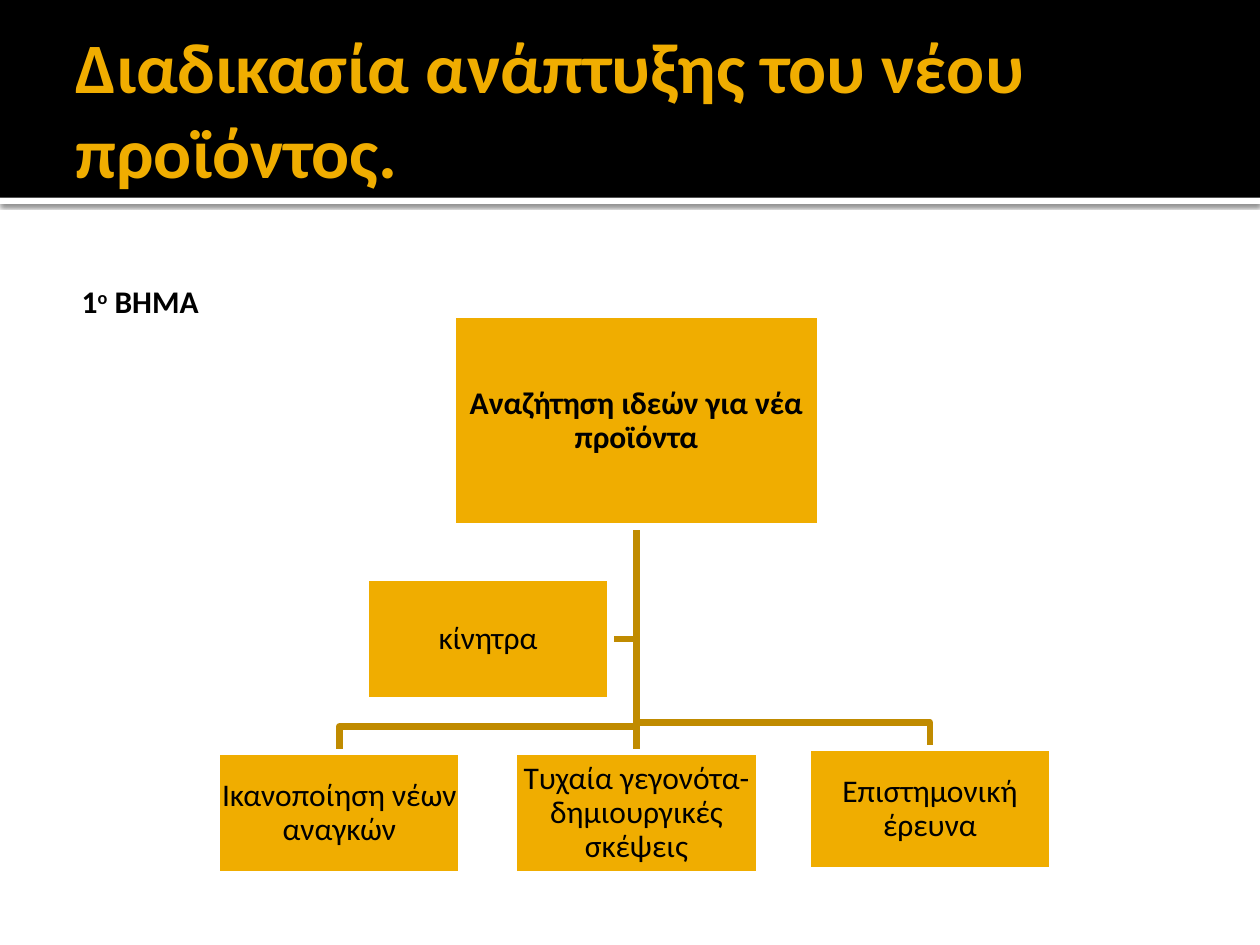
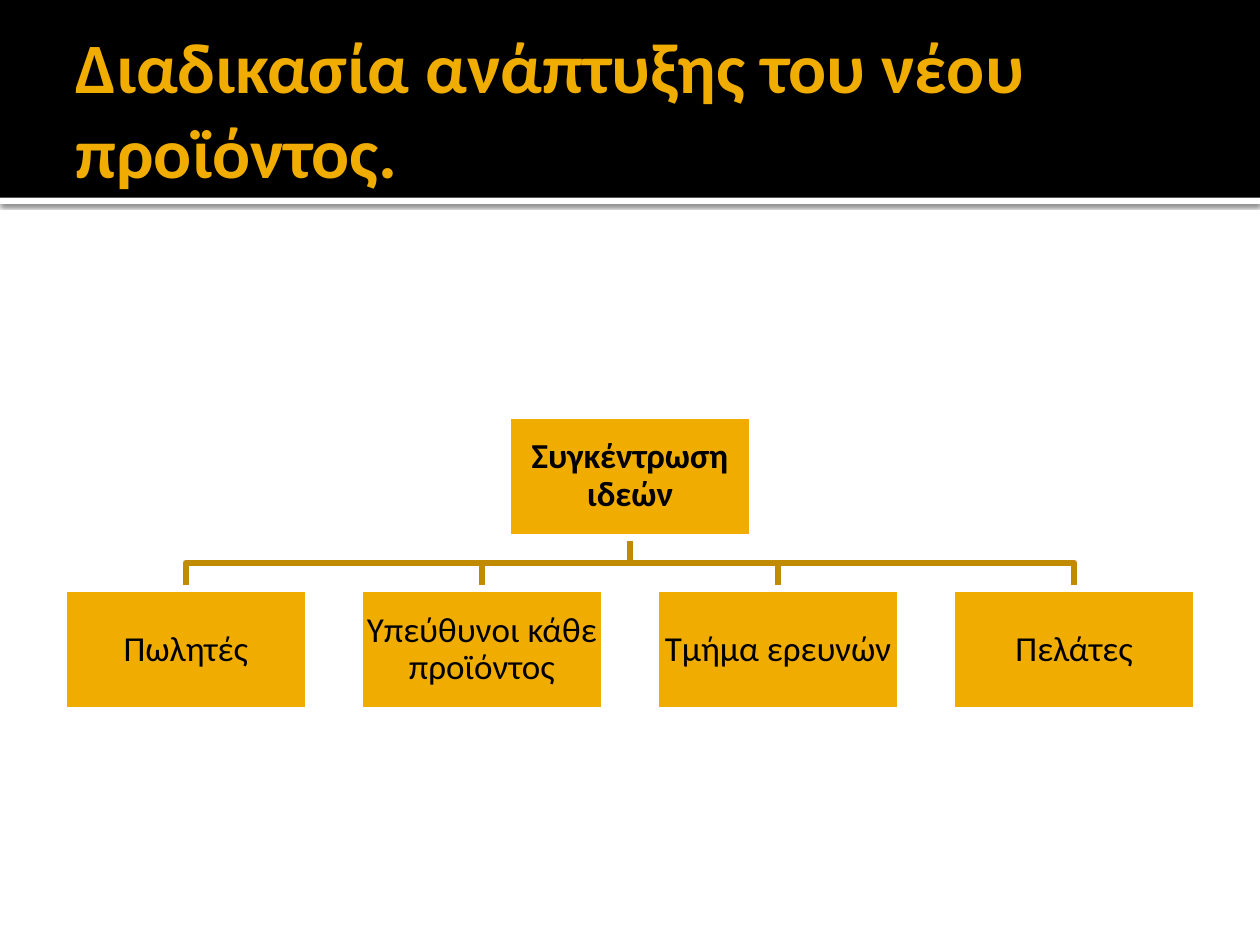
from lxml.etree import SubElement
from pptx import Presentation
from pptx.dml.color import RGBColor
from pptx.enum.shapes import MSO_CONNECTOR, MSO_SHAPE
from pptx.enum.text import MSO_ANCHOR, PP_ALIGN
from pptx.oxml.ns import qn
from pptx.util import Pt

BLACK = RGBColor(0x00, 0x00, 0x00)
WHITE = RGBColor(0xFF, 0xFF, 0xFF)
AMBER = RGBColor(0xF0, 0xAD, 0x00)
DARK_AMBER = RGBColor(0xC0, 0x8B, 0x00)
FONT = "Calibri"
TITLE = "Διαδικασία ανάπτυξης του νέου προϊόντος."
SLIDE_WIDTH, SLIDE_HEIGHT = 720, 540
BAND_HEIGHT, STRIP_HEIGHT = 113, 3.6
NODE_WIDTH, NODE_HEIGHT = 140, 69.8
LINE_WIDTH = 3.78
BRANCH_DROP = 14.7


def style_runs(paragraph, size, color, bold):
    """Give every run of a paragraph the deck font."""
    for run in paragraph.runs:
        run.font.name = FONT
        run.font.size = Pt(size)
        run.font.color.rgb = color
        run.font.bold = bold


def set_margins(text_frame, left, other):
    """Set the left inset and one common inset for the other sides."""
    text_frame.margin_left = Pt(left)
    text_frame.margin_top = text_frame.margin_right = text_frame.margin_bottom = Pt(other)


def add_rectangle(slide, left, top, width, height, color):
    """Add a flat filled rectangle without outline."""
    shape = slide.shapes.add_shape(
        MSO_SHAPE.RECTANGLE, Pt(left), Pt(top), Pt(width), Pt(height))
    shape.shadow.inherit = False
    shape.fill.solid()
    shape.fill.fore_color.rgb = color
    shape.line.fill.background()
    return shape


def add_strip_shadow(strip):
    """Cast a soft shadow straight below the strip."""
    effects = strip._element.spPr.find(qn("a:effectLst"))
    shadow = SubElement(effects, qn("a:outerShdw"), blurRad=str(Pt(2.5)),
                        dist=str(Pt(0.8)), dir="5400000", algn="tl", rotWithShape="0")
    color = SubElement(shadow, qn("a:srgbClr"), val=str(BLACK))
    SubElement(color, qn("a:alpha"), val="60000")


def add_header(slide):
    """Draw the black band, its white strip and the title."""
    strip = add_rectangle(slide, 0, BAND_HEIGHT, SLIDE_WIDTH, STRIP_HEIGHT, WHITE)
    add_strip_shadow(strip)
    add_rectangle(slide, 0, 0, SLIDE_WIDTH, BAND_HEIGHT, BLACK)
    title = slide.shapes.add_textbox(Pt(36), Pt(12.2), Pt(648), Pt(98.6))
    text_frame = title.text_frame
    text_frame.word_wrap = True
    text_frame.vertical_anchor = MSO_ANCHOR.MIDDLE
    set_margins(text_frame, 7.2, 3.6)
    text_frame.text = TITLE
    style_runs(text_frame.paragraphs[0], 40.5, AMBER, True)


def add_node(slide, text, left, top, width, height, size, bold=False):
    """Draw one amber box with centred text."""
    node = add_rectangle(slide, left, top, width, height, AMBER)
    node.line.color.rgb = WHITE
    node.line.width = Pt(LINE_WIDTH)
    text_frame = node.text_frame
    text_frame.word_wrap = True
    text_frame.vertical_anchor = MSO_ANCHOR.MIDDLE
    set_margins(text_frame, 0.9, 0.9)
    text_frame.text = text
    paragraph = text_frame.paragraphs[0]
    paragraph.alignment = PP_ALIGN.CENTER
    paragraph.line_spacing = 0.9
    style_runs(paragraph, size, BLACK, bold)


def add_branch(slide, points):
    """Draw a line through the points, as a connector when it is straight."""
    corners = [(Pt(x), Pt(y)) for x, y in points]
    if len(corners) == 2:
        branch = slide.shapes.add_connector(MSO_CONNECTOR.STRAIGHT, *corners[0], *corners[1])
        SubElement(branch._element.spPr, qn("a:effectLst"))
    else:
        builder = slide.shapes.build_freeform(*corners[0])
        builder.add_line_segments(corners[1:], close=False)
        branch = builder.convert_to_shape()
        branch.shadow.inherit = False
        branch.fill.background()
    branch.line.color.rgb = DARK_AMBER
    branch.line.width = Pt(LINE_WIDTH)


def add_hierarchy(slide, box, root, children, size, assistant=None):
    """Draw a root centred in the box, its children and an optional assistant."""
    left, top, width = box
    root_text, root_width, root_height = root
    center = left + width / 2
    root_bottom = top + root_height
    if assistant:
        assistant_text, assistant_left, assistant_top = assistant
        right = left + assistant_left + NODE_WIDTH
        middle = top + assistant_top + NODE_HEIGHT / 2
        add_branch(slide, [(center, root_bottom), (center, middle), (right, middle)])
    for _, child_left, child_top in reversed(children):
        child_center = left + child_left + NODE_WIDTH / 2
        end = (child_center, top + child_top)
        bend = top + child_top - BRANCH_DROP
        if abs(child_center - center) < 1:
            add_branch(slide, [(center, root_bottom), (center, top + child_top)])
        else:
            add_branch(slide, [(center, root_bottom), (center, bend), (child_center, bend), end])
    add_node(slide, root_text, center - root_width / 2, top, root_width, root_height, size, True)
    for text, node_left, node_top in children + ([assistant] if assistant else []):
        add_node(slide, text, left + node_left, top + node_top, NODE_WIDTH, NODE_HEIGHT, size)


def add_step_label(slide, left, top):
    """Write the step number with its raised ordinal letter."""
    label = slide.shapes.add_textbox(Pt(left), Pt(top), Pt(118), Pt(29))
    label.text_frame.word_wrap = True
    paragraph = label.text_frame.paragraphs[0]
    for text in ("1", "ο", " ΒΗΜΑ"):
        paragraph.add_run().text = text
    style_runs(paragraph, 18, BLACK, True)
    paragraph.runs[1]._r.get_or_add_rPr().set("baseline", "30000")


def build_search_slide(slide):
    """Build the slide on the search for ideas."""
    add_header(slide)
    children = [("Ικανοποίηση νέων αναγκών", 0, 249.8),
                ("Τυχαία γεγονότα-δημιουργικές σκέψεις", 169.8, 249.8),
                ("Επιστημονική έρευνα", 337.5, 247.5)]
    add_hierarchy(slide, (123.9, 180, 479.6),
                  ("Αναζήτηση ιδεών για νέα προϊόντα", 210, 121),
                  children, 18, ("κίνητρα", 85, 150.3))
    add_step_label(slide, 39.6, 157.7)


def build_collection_slide(slide):
    """Build the slide on the collection of ideas."""
    add_header(slide)
    sources = ("Πωλητές", "Υπεύθυνοι κάθε προϊόντος", "Τμήμα ερευνών", "Πελάτες")
    width = 647.6
    step = (width - NODE_WIDTH) / (len(sources) - 1)
    children = [(text, index * step, 99) for index, text in enumerate(sources)]
    add_hierarchy(slide, (36.2, 237.4, width),
                  ("Συγκέντρωση ιδεών", NODE_WIDTH, NODE_HEIGHT), children, 20)


def main():
    """Build and save the presentation."""
    presentation = Presentation()
    presentation.slide_width = Pt(SLIDE_WIDTH)
    presentation.slide_height = Pt(SLIDE_HEIGHT)
    for build in (build_search_slide, build_collection_slide):
        build(presentation.slides.add_slide(presentation.slide_layouts[6]))
    presentation.save("out.pptx")


if __name__ == "__main__":
    main()
